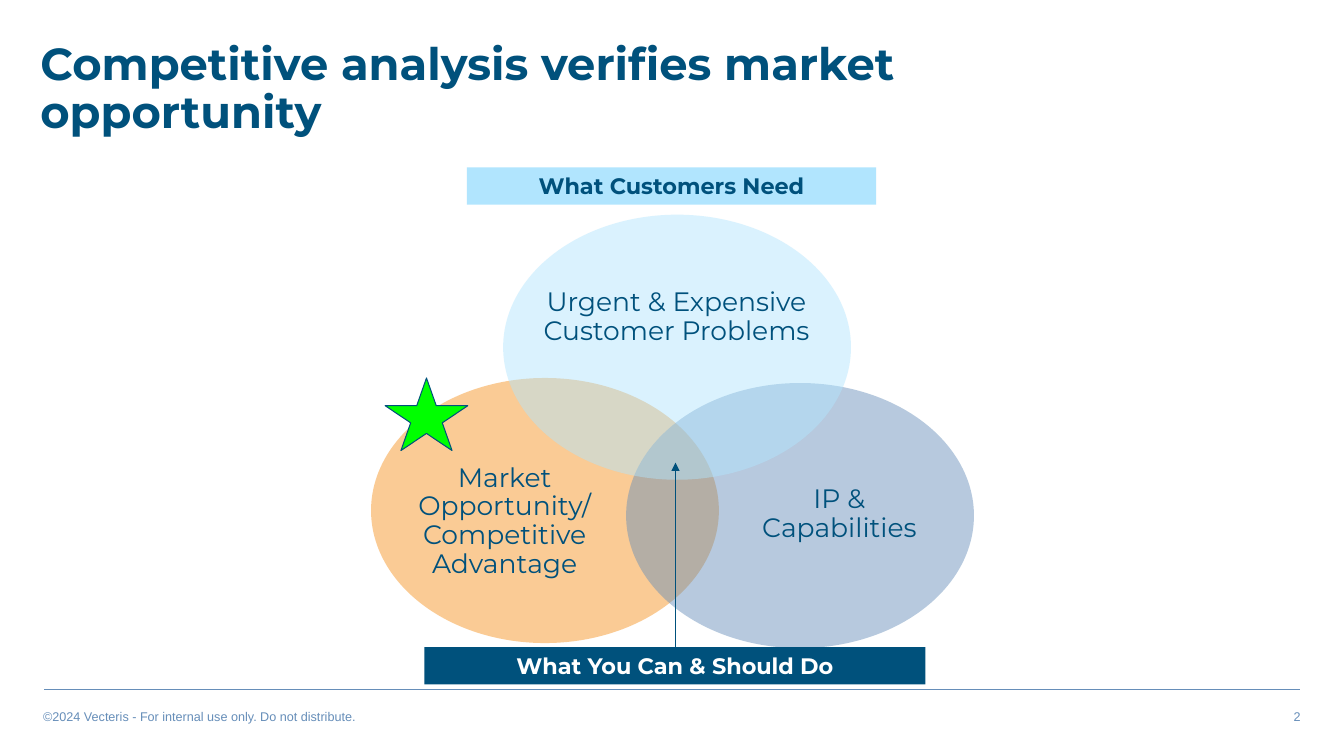
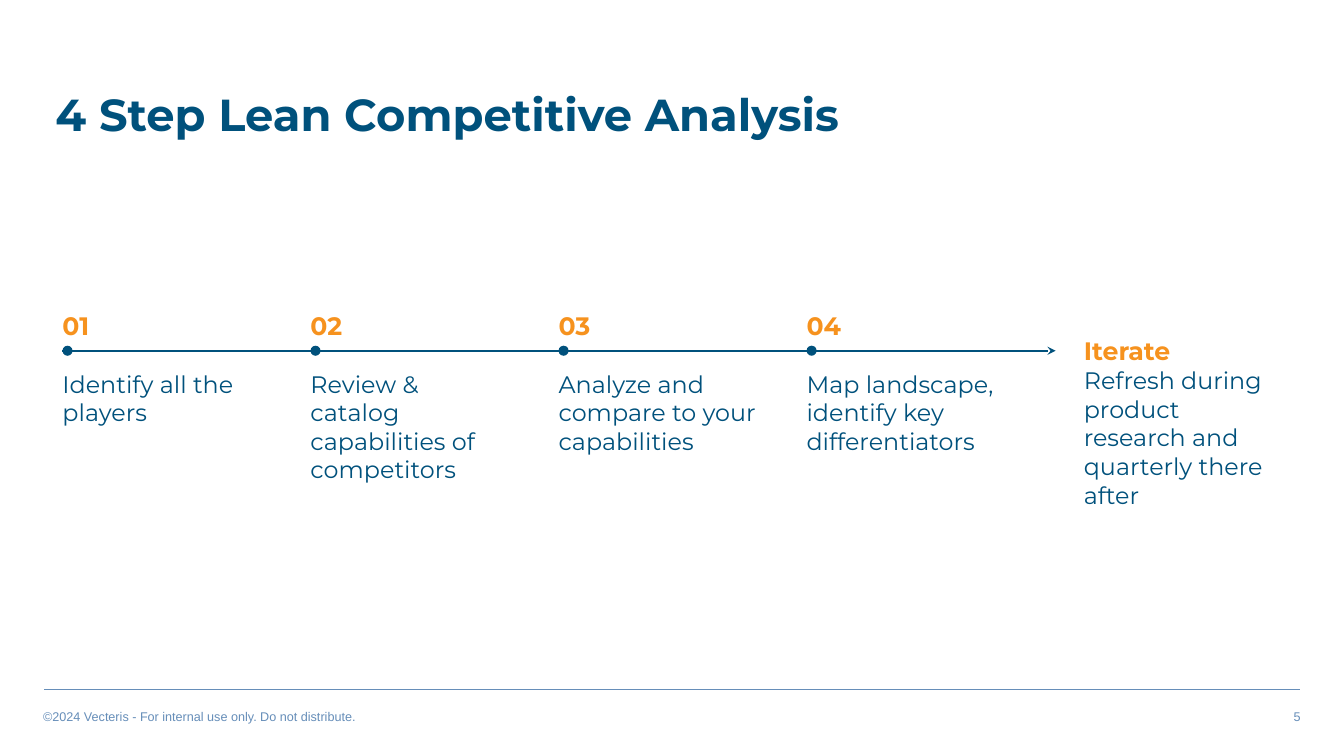
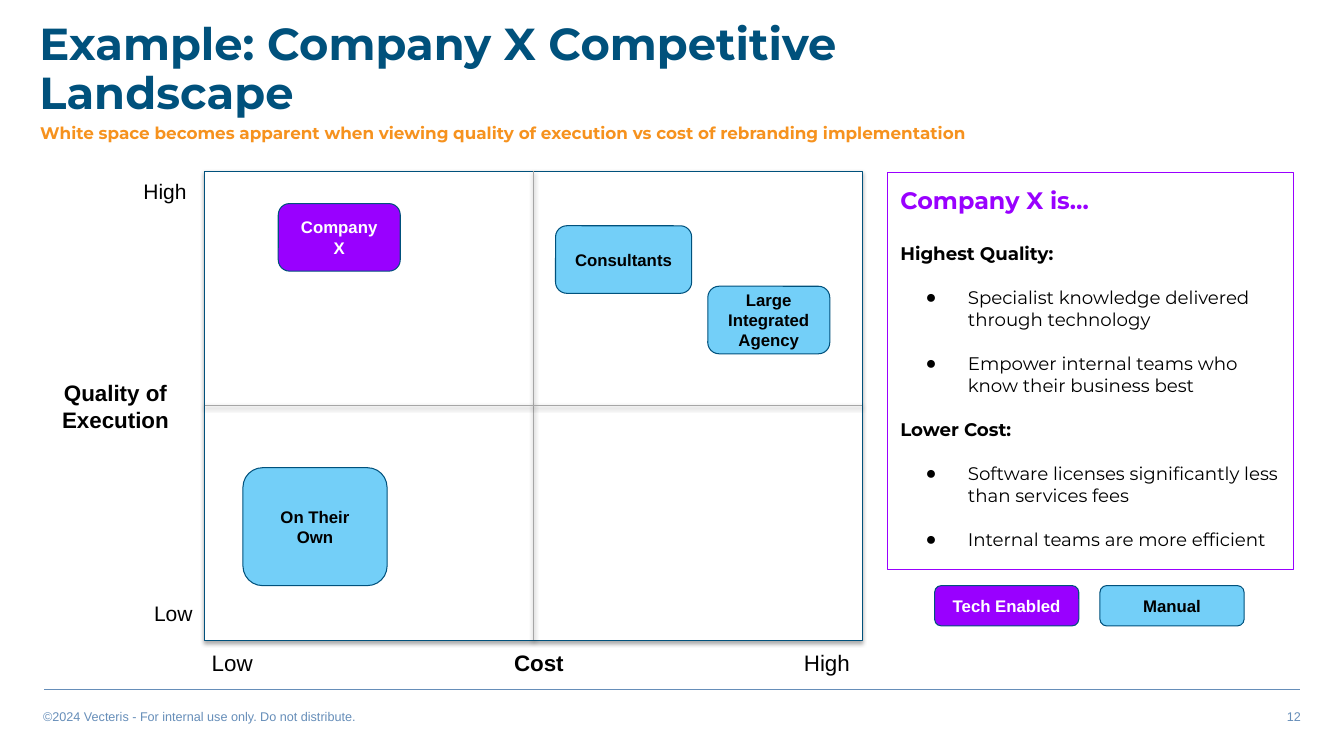
"""Build three competitive analysis slides: overlap diagram, four steps, landscape map."""
from lxml.etree import SubElement
from pptx import Presentation
from pptx.dml.color import RGBColor
from pptx.enum.shapes import MSO_CONNECTOR, MSO_SHAPE as SHAPE
from pptx.enum.text import MSO_ANCHOR as ANCHOR, MSO_AUTO_SIZE, PP_ALIGN as ALIGN
from pptx.oxml.ns import qn
from pptx.util import Emu, Pt

PX = 9144
NAVY, STEEL, SKY, BLUE = "00517C", "668EB9", "B1E5FE", "73CFF8"
ORANGE, PURPLE, GREEN, GREY = "F6921E", "9900FF", "00FF00", "A6A6A6"
BLACK, WHITE = "000000", "FFFFFF"
HEAD, PLAIN = "Montserrat", "Arial"
LEFT, CENTER, RIGHT = ALIGN.LEFT, ALIGN.CENTER, ALIGN.RIGHT
FOOTER = "©2024 Vecteris - For internal use only. Do not distribute."

CIRCLES = [
    ((368, 375), ORANGE, ["Market Opportunity/ Competitive Advantage"], (368, 476, 265, 83)),
    ((621, 380), STEEL, ["IP &", "Capabilities"], (700, 469, 265, 83)),
    ((499, 213), SKY, ["Urgent & Expensive Customer Problems"], (523, 214, 296, 202)),
]
BANNERS = [
    ("What You Can & Should Do", (421, 642, 497, 37), NAVY, WHITE),
    ("What Customers Need", (463, 166, 406, 37), SKY, NAVY),
]
STEPS = [
    "Identify all the players",
    "Review & catalog capabilities of competitors",
    "Analyze and compare to your capabilities",
    "Map landscape, identify key differentiators",
]
ITERATE = "Refresh during product research and quarterly there after"
SUBTITLE = ("White space becomes apparent when viewing quality of execution "
            "vs cost of rebranding implementation")
AXIS_LABELS = [
    ("High", (63, 170, 135, 39), 15, False, RIGHT),
    ("Quality of Execution", (47, 369, 135, 67), 16, True, CENTER),
    ("Low", (69, 589, 135, 39), 15, False, RIGHT),
    ("Low", (197, 637, 128, 40), 16, False, LEFT),
    ("High", (713, 637, 143, 40), 16, False, RIGHT),
    ("Cost", (489, 637, 91, 40), 16, True, CENTER),
]
TAGS = [
    ("Large Integrated Agency", (702, 284, 121, 67), BLUE, BLACK),
    ("Consultants", (551, 224, 135, 67), BLUE, BLACK),
    ("On Their Own", (241, 464, 143, 117), BLUE, BLACK),
    ("Company X", (276, 202, 121, 67), PURPLE, WHITE),
    ("Tech Enabled", (927, 581, 143, 40), PURPLE, WHITE),
    ("Manual", (1091, 581, 143, 40), BLUE, BLACK),
]
STRENGTHS = [
    ("Highest Quality:", ["Specialist knowledge delivered through technology",
                          "Empower internal teams who know their business best"]),
    ("Lower Cost:", ["Software licenses significantly less than services fees",
                     "Internal teams are more efficient"]),
]


def rgb(color):
    return RGBColor.from_string(color)


def px(*values):
    return [Emu(v * PX) for v in values]


def frame(sp, insets=(10, 5, 10, 5), anchor=ANCHOR.TOP):
    tf = sp.text_frame
    tf.word_wrap, tf.auto_size, tf.vertical_anchor = True, MSO_AUTO_SIZE.NONE, anchor
    tf.margin_left, tf.margin_top, tf.margin_right, tf.margin_bottom = px(*insets)
    return tf


def style(p, size, color, bold=False, font=HEAD, align=LEFT, spacing=1.0, before=0):
    p.alignment, p.line_spacing, p.space_before = align, spacing, Pt(before)
    for r in p.runs:
        r.font.size, r.font.bold, r.font.name = Pt(size), bold, font
        r.font.color.rgb = rgb(color)


def write(sp, lines, insets=(10, 5, 10, 5), anchor=ANCHOR.TOP, **look):
    tf = frame(sp, insets, anchor)
    tf.text = "\n".join(lines)
    for p in tf.paragraphs:
        style(p, **look)


def label(s, box, lines, **look):
    write(s.shapes.add_textbox(*px(*box)), lines, **look)


def shape(s, kind, box, fill, line=None, opacity=None):
    sp = s.shapes.add_shape(kind, *px(*box))
    sp.shadow.inherit = False
    sp.fill.solid()
    sp.fill.fore_color.rgb = rgb(fill)
    if opacity:
        clr = sp.fill._xPr.find(".//" + qn("a:srgbClr"))
        SubElement(clr, qn("a:alpha"), val=str(opacity * 1000))
    if line:
        sp.line.color.rgb, sp.line.width = rgb(line), Pt(0.75)
    else:
        sp.line.fill.background()
    return sp


def connect(s, ends, color, width, head=None):
    ln = s.shapes.add_connector(MSO_CONNECTOR.STRAIGHT, *px(*ends))
    ln.line.color.rgb, ln.line.width = rgb(color), Pt(width)
    if head:
        SubElement(ln.line._get_or_add_ln(), qn("a:tailEnd"), type=head)
    SubElement(ln._element.spPr, qn("a:effectLst"))
    return ln


def drop_shadow(sp, opacity):
    effects = sp._element.spPr.find(qn("a:effectLst"))
    shadow = SubElement(effects, qn("a:outerShdw"), blurRad=str(Pt(3.1)), dist=str(Pt(1.7)),
                        dir="5400000", algn="ctr", rotWithShape="0")
    clr = SubElement(shadow, qn("a:srgbClr"), val=BLACK)
    SubElement(clr, qn("a:alpha"), val=str(opacity * 1000))


def bullet(p, char=None):
    pPr = p._p.get_or_add_pPr()
    left, indent = px(67, -42) if char else (0, 0)
    pPr.set("marL", str(left))
    pPr.set("indent", str(indent))
    if char:
        clr = SubElement(pPr, qn("a:buClr"))
        SubElement(clr, qn("a:srgbClr"), val=BLACK)
        SubElement(pPr, qn("a:buChar"), char=char)
    else:
        SubElement(pPr, qn("a:buNone"))


def place(sp, box):
    sp.left, sp.top, sp.width, sp.height = px(*box)


def new_slide(prs, layout, title, box, number):
    s = prs.slides.add_slide(prs.slide_layouts[layout])
    place(s.shapes.title, box)
    write(s.shapes.title, [title], size=32, color=NAVY, bold=True, spacing=0.9)
    connect(s, (44, 684, 1289, 684), STEEL, 1)
    for x, text, align in ((33, FOOTER, LEFT), (767, str(number), RIGHT)):
        label(s, (x, 698, 533, 25), [text], size=9, color=STEEL, font=PLAIN, align=align)
    return s


def overlap_slide(prs):
    s = new_slide(prs, 5, "Competitive analysis verifies market opportunity",
                  (30, 36, 1024, 117), 2)
    for corner, color, lines, box in CIRCLES:
        shape(s, SHAPE.OVAL, (*corner, 345, 263), color, opacity=47)
        label(s, box, lines, insets=(0, 0, 0, 0), anchor=ANCHOR.MIDDLE,
              size=19, color=NAVY, align=CENTER, spacing=0.9)
    for text, box, fill, color in BANNERS:
        write(shape(s, SHAPE.RECTANGLE, box, fill), [text],
              size=16, color=color, bold=True, align=CENTER)
    connect(s, (670, 642, 670, 459), NAVY, 0.75, "triangle")
    shape(s, SHAPE.STAR_5_POINT, (382, 375, 82, 72), GREEN, NAVY)


def step_text(s, box, heading, text, gap):
    tf = frame(s.shapes.add_textbox(*px(*box)), (0, 1, 0, 0))
    tf.text = f"{heading}\n{text}"
    style(tf.paragraphs[0], 18, ORANGE, bold=True)
    style(tf.paragraphs[1], 17, NAVY, before=gap)


def steps_slide(prs):
    s = new_slide(prs, 5, "4 Step Lean Competitive Analysis", (45, 87, 986, 70), 5)
    left, pitch, axis, dot = 62, 246, 348, 10
    connect(s, (left, axis, 1047, axis), NAVY, 1.5, "stealth")
    for i, text in enumerate(STEPS):
        x = left + i * pitch
        step_text(s, (x, 307, 200, 117), f"{i + 1:02}", text, 20.5)
        shape(s, SHAPE.OVAL, (x, axis - dot // 2, dot, dot), NAVY)
    step_text(s, (1075, 332, 193, 185), "Iterate", ITERATE, 0)


def landscape_slide(prs):
    s = new_slide(prs, 1, "Example: Company X Competitive Landscape",
                  (29, 17, 983, 112), 12)
    label(s, (30, 114, 998, 38), [SUBTITLE], insets=(10, 10, 10, 10),
          size=12, color=ORANGE, bold=True, spacing=0.9)

    x, y, w, h = 203, 170, 652, 465
    drop_shadow(shape(s, SHAPE.RECTANGLE, (x, y, w, h), WHITE, NAVY), 33)
    mid_x, mid_y = x + w // 2, y + h // 2
    for ends in ((mid_x, y, mid_x, y + h), (x, mid_y, x + w, mid_y)):
        drop_shadow(connect(s, ends, GREY, 0.75), 36)
    for text, box, size, bold, align in AXIS_LABELS:
        label(s, box, [text], insets=(13, 7, 13, 7), size=size, color=BLACK,
              bold=bold, font=PLAIN, align=align)
    for text, box, fill, color in TAGS:
        write(shape(s, SHAPE.ROUNDED_RECTANGLE, box, fill, NAVY), [text],
              insets=(13, 13, 13, 13), anchor=ANCHOR.MIDDLE, size=12, color=color,
              bold=True, font=PLAIN, align=CENTER)

    panel = s.placeholders[1]
    place(panel, (880, 171, 403, 394))
    panel.line.color.rgb, panel.line.width = rgb(PURPLE), Pt(0.75)
    tf = frame(panel, (13, 13, 13, 13))
    tf.text = "Company X is…"
    style(tf.paragraphs[0], 17, PURPLE, bold=True)
    bullet(tf.paragraphs[0])
    for i, (heading, points) in enumerate(STRENGTHS):
        for j, text in enumerate([heading, *points]):
            p = tf.add_paragraph()
            p.text = text
            style(p, 13, BLACK, bold=j == 0, before=20.5 if i == j == 0 else 15.8)
            bullet(p, "●" if j else None)


def main():
    prs = Presentation()
    prs.slide_width, prs.slide_height = px(1333, 750)
    overlap_slide(prs)
    steps_slide(prs)
    landscape_slide(prs)
    prs.save("out.pptx")


if __name__ == "__main__":
    main()
